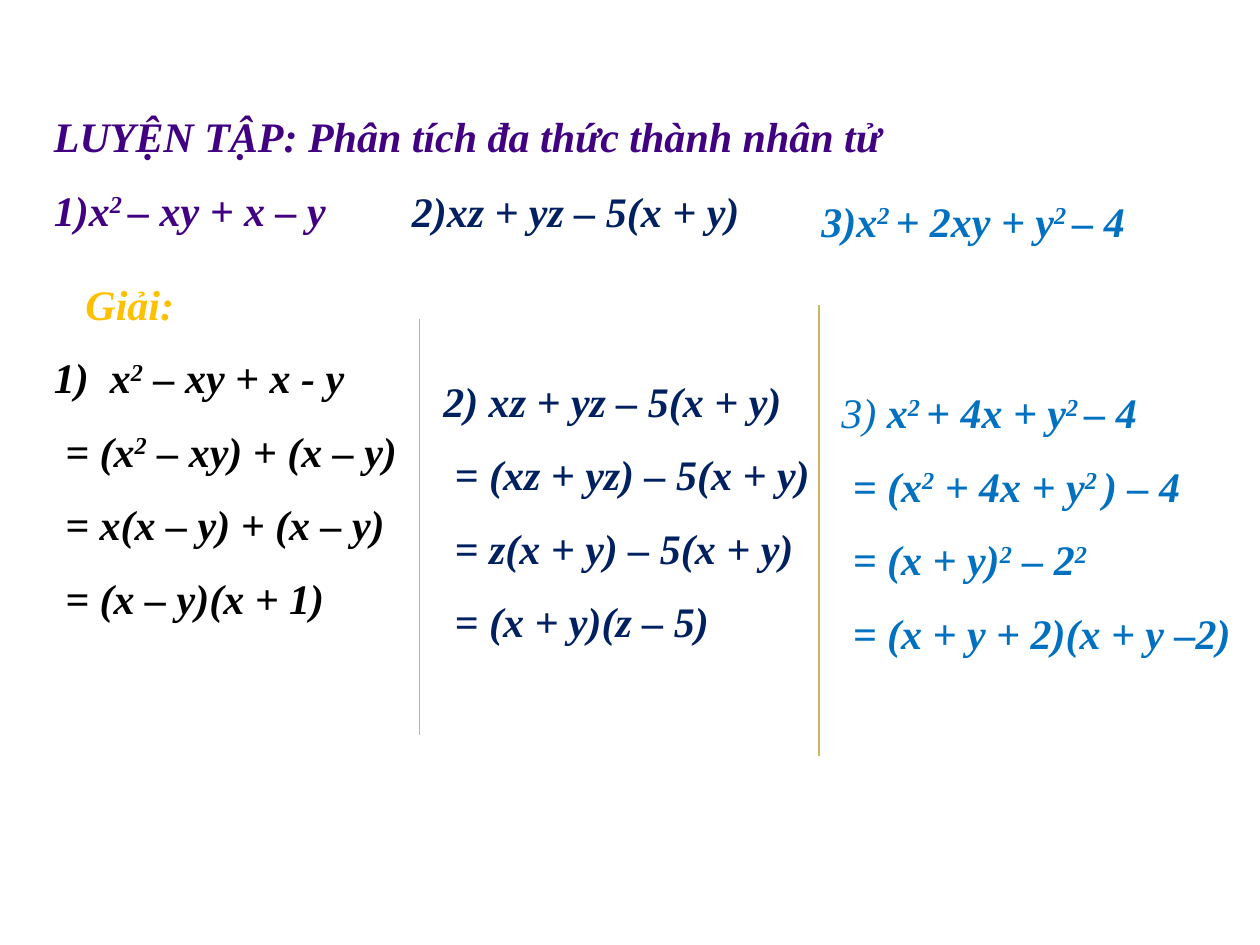
from lxml.etree import SubElement
from pptx import Presentation
from pptx.dml.color import RGBColor
from pptx.enum.shapes import MSO_CONNECTOR
from pptx.enum.text import MSO_AUTO_SIZE
from pptx.oxml.ns import qn
from pptx.util import Inches, Pt

COLORS = {
    "purple": "410082",
    "black": "000000",
    "gold": "FFC000",
    "navy": "002060",
    "blue": "0070C0",
    "divider": "CCB661",
}
EQUATION_INDENT = 0.09
ANSWER_INDENT = 0.25


def write_paragraph(paragraph, marked_text, color, indent):
    """Write text whose every second part between bars is superscript."""
    paragraph._p.get_or_add_pPr().set("marL", str(Inches(indent)))
    for position, part in enumerate(marked_text.split("|")):
        if not part:
            continue
        run = paragraph.add_run()
        run.text = part
        font = run.font
        font.name = "Times New Roman"
        font.size = Pt(24)
        font.bold = font.italic = True
        font.color.rgb = RGBColor.from_string(COLORS[color])
        if position % 2:
            font._element.set("baseline", "30000")


def add_lines(slide, box, lines):
    """Place a text box of (marked text, color, indent) lines."""
    text_frame = slide.shapes.add_textbox(*map(Inches, box)).text_frame
    text_frame.word_wrap = True
    text_frame.auto_size = MSO_AUTO_SIZE.SHAPE_TO_FIT_TEXT
    for number, line in enumerate(lines):
        paragraph = text_frame.add_paragraph() if number else text_frame.paragraphs[0]
        if number:
            paragraph.space_before = Pt(13.2)
        write_paragraph(paragraph, *line)
    return text_frame


def add_solution(slide, box, color, problem, steps, heading=()):
    """Place a worked solution with its steps indented under the problem."""
    lines = [*heading, (problem, color, 0)]
    lines += [(step, color, EQUATION_INDENT) for step in steps]
    return add_lines(slide, box, lines)


def add_divider(slide, left, top, bottom):
    """Draw a thin vertical line between two solutions."""
    ends = map(Inches, (left, top, left, bottom))
    divider = slide.shapes.add_connector(MSO_CONNECTOR.STRAIGHT, *ends)
    divider.line.color.rgb = RGBColor.from_string(COLORS["divider"])
    divider.line.width = Pt(0.75)
    SubElement(divider._element.spPr, qn("a:effectLst"))


def add_problems(slide):
    """Place the title and the three problems."""
    add_lines(slide, (0.33, 0.83, 9.5, 1.1), [
        ("LUYỆN TẬP: Phân tích đa thức thành nhân tử", "purple", 0),
        ("1)x|2 |– xy + x – y", "purple", 0),
    ])
    add_lines(slide, (3.17, 1.42, 3.2, 0.5), [("2)xz + yz – 5(x + y)", "navy", 0)])
    add_lines(slide, (6.42, 1.5, 3.4, 0.5), [("3)x|2 |+ 2xy + y|2 |– 4", "blue", 0)])


def add_solutions(slide):
    """Place the three solutions and the dividers between them."""
    add_solution(
        slide, (0.33, 2.16, 3.1, 2.93), "black", "1)  x|2| – xy + x - y",
        ["= (x|2| – xy) + (x – y)", "= x(x – y) + (x – y)", "= (x – y)(x + 1)"],
        heading=[("Giải:", "gold", ANSWER_INDENT)],
    )
    add_solution(
        slide, (3.42, 2.93, 3.3, 2.32), "navy", "2) xz + yz – 5(x + y)",
        ["= (xz + yz) – 5(x + y)", "= z(x + y) – 5(x + y)", "= (x + y)(z – 5)"],
    )
    third = add_solution(
        slide, (6.58, 3.02, 3.4, 2.32), "blue", "3) ||x|2 |+ 4x + y|2 |– 4",
        ["= (x|2| + 4x + y|2 |) – 4", "= (x + y)|2| – 2|2", "= (x + y + 2)(x + y –2)"],
    )
    third.paragraphs[0].runs[0].font.bold = False
    add_divider(slide, 3.33, 2.53, 5.83)
    add_divider(slide, 6.5, 2.42, 6)


def main():
    """Build the exercise slide and save it."""
    presentation = Presentation()
    presentation.slide_width = Inches(10)
    presentation.slide_height = Inches(7.5)
    slide = presentation.slides.add_slide(presentation.slide_layouts[6])
    add_problems(slide)
    add_solutions(slide)
    presentation.save("out.pptx")


if __name__ == "__main__":
    main()
